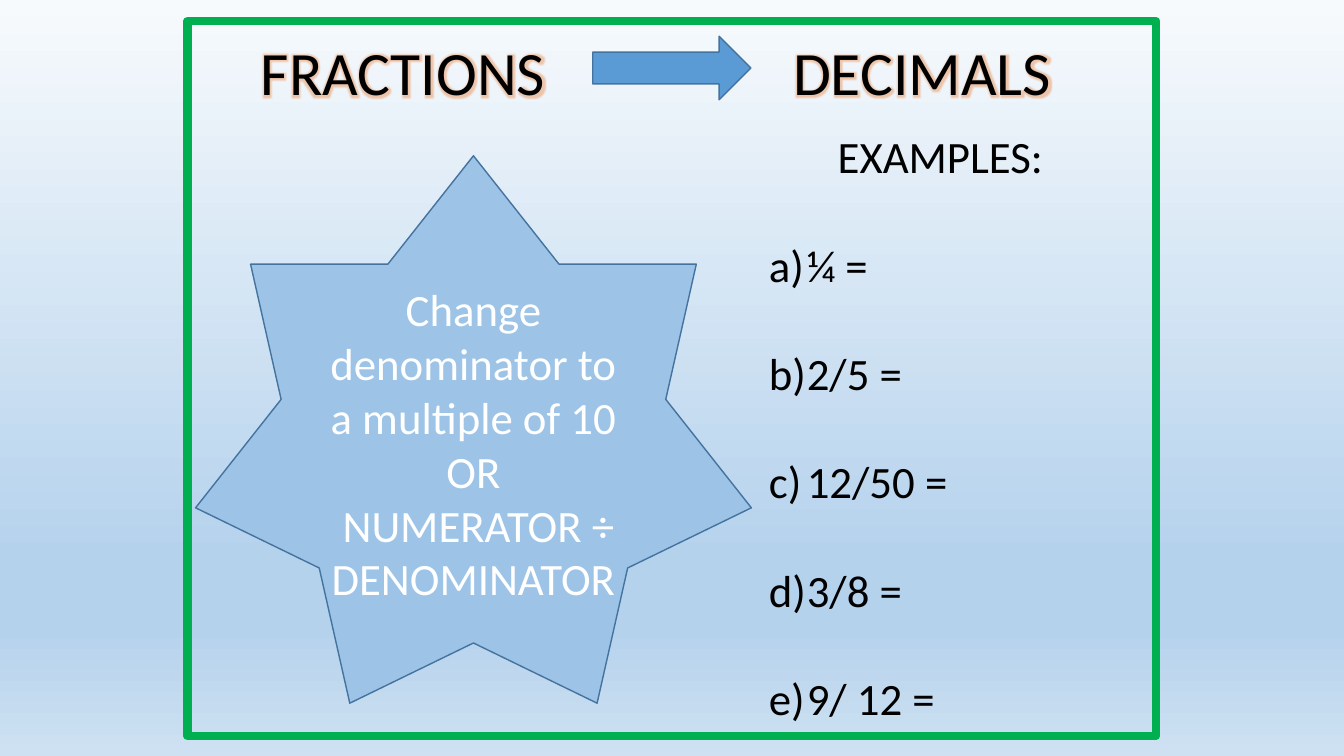
from lxml.etree import SubElement
from pptx import Presentation
from pptx.dml.color import RGBColor
from pptx.enum.shapes import MSO_SHAPE
from pptx.enum.text import MSO_ANCHOR, PP_ALIGN
from pptx.oxml import parse_xml
from pptx.oxml.ns import nsdecls, qn
from pptx.util import Pt

COLORS = {
    "star": "9DC3E6",
    "arrow": "5B9BD5",
    "edge": "43739E",
    "frame": "00B050",
    "glow": "ED7D31",
    "black": "000000",
    "white": "FFFFFF",
}
SKY = [(0, "F7FAFD"), (74, "B5D2EC"), (83, "B5D2EC"), (100, "CEE1F2")]
LINE_HEIGHT = 39


def add_outline_shape(kind, left, top, width, height, fill, line, weight):
    shape = page.shapes.add_shape(kind, Pt(left), Pt(top), Pt(width), Pt(height))
    shape.shadow.inherit = False
    if fill:
        shape.fill.solid()
        shape.fill.fore_color.rgb = RGBColor.from_string(COLORS[fill])
    else:
        shape.fill.background()
    shape.line.color.rgb = RGBColor.from_string(COLORS[line])
    shape.line.width = Pt(weight)
    return shape


def write_text(frame, lines, size, color):
    frame.word_wrap = True
    frame.text = "\n".join(lines)
    for para in frame.paragraphs:
        for span in para.runs:
            span.font.size = Pt(size)
            span.font.name = "Calibri"
            span.font.color.rgb = RGBColor.from_string(COLORS[color])


deck = Presentation()
deck.slide_width = Pt(960)
deck.slide_height = Pt(540)
page = deck.slides.add_slide(deck.slide_layouts[6])

sky_fill = page.background.fill
sky_fill.gradient()
sky_fill.gradient_angle = 270
stops = page.element.find(".//" + qn("a:gsLst"))
for stop in list(stops):
    stops.remove(stop)
for position, color in SKY:
    stop = SubElement(stops, qn("a:gs"), pos=str(position * 1000))
    SubElement(stop, qn("a:srgbClr"), val=color)

star = add_outline_shape(MSO_SHAPE.STAR_7_POINT, 139.7, 111.3, 397, 391, "star", "edge", 1)
advice = ["Change denominator to a multiple of 10", "OR", " NUMERATOR ÷ DENOMINATOR"]
write_text(star.text_frame, advice, 32, "white")
star.text_frame.vertical_anchor = MSO_ANCHOR.MIDDLE
star.text_frame.margin_top = Pt(3.6 + LINE_HEIGHT)
for para in star.text_frame.paragraphs:
    para.alignment = PP_ALIGN.CENTER

for title, left, width in [("DECIMALS", 559.4, 238.3), ("FRACTIONS", 179.3, 272.2)]:
    box = page.shapes.add_textbox(Pt(left), Pt(20.9), Pt(width), Pt(60.5))
    write_text(box.text_frame, [title], 44, "black")
    span = box.text_frame.paragraphs[0].runs[0]
    glow = parse_xml(
        f'<a:effectLst {nsdecls("a")}><a:glow rad="63500"><a:srgbClr val="{COLORS["glow"]}">'
        '<a:alpha val="40000"/></a:srgbClr></a:glow></a:effectLst>'
    )
    span.font._element.find(qn("a:solidFill")).addnext(glow)

add_outline_shape(MSO_SHAPE.RIGHT_ARROW, 423.4, 25.9, 113, 45.4, "arrow", "edge", 1)
add_outline_shape(MSO_SHAPE.RECTANGLE, 133.9, 15.1, 691.9, 510.5, None, "frame", 6)

box = page.shapes.add_textbox(Pt(542.2), Pt(88.6), Pt(266.4), Pt(433.4))
exercises = ["¼ =", "2/5 =", "12/50 =", "3/8 =", "9/ 12 ="]
write_text(box.text_frame, ["EXAMPLES: "] + exercises, 32, "black")
heading, *items = box.text_frame.paragraphs
heading.alignment = PP_ALIGN.CENTER
for para in items:
    para.space_before = Pt(LINE_HEIGHT)
    properties = para._p.get_or_add_pPr()
    properties.set("marL", str(Pt(27)))
    properties.set("indent", str(Pt(-27)))
    SubElement(properties, qn("a:buFont"), typeface="+mj-lt")
    SubElement(properties, qn("a:buAutoNum"), type="alphaLcParenR")

deck.save("out.pptx")
